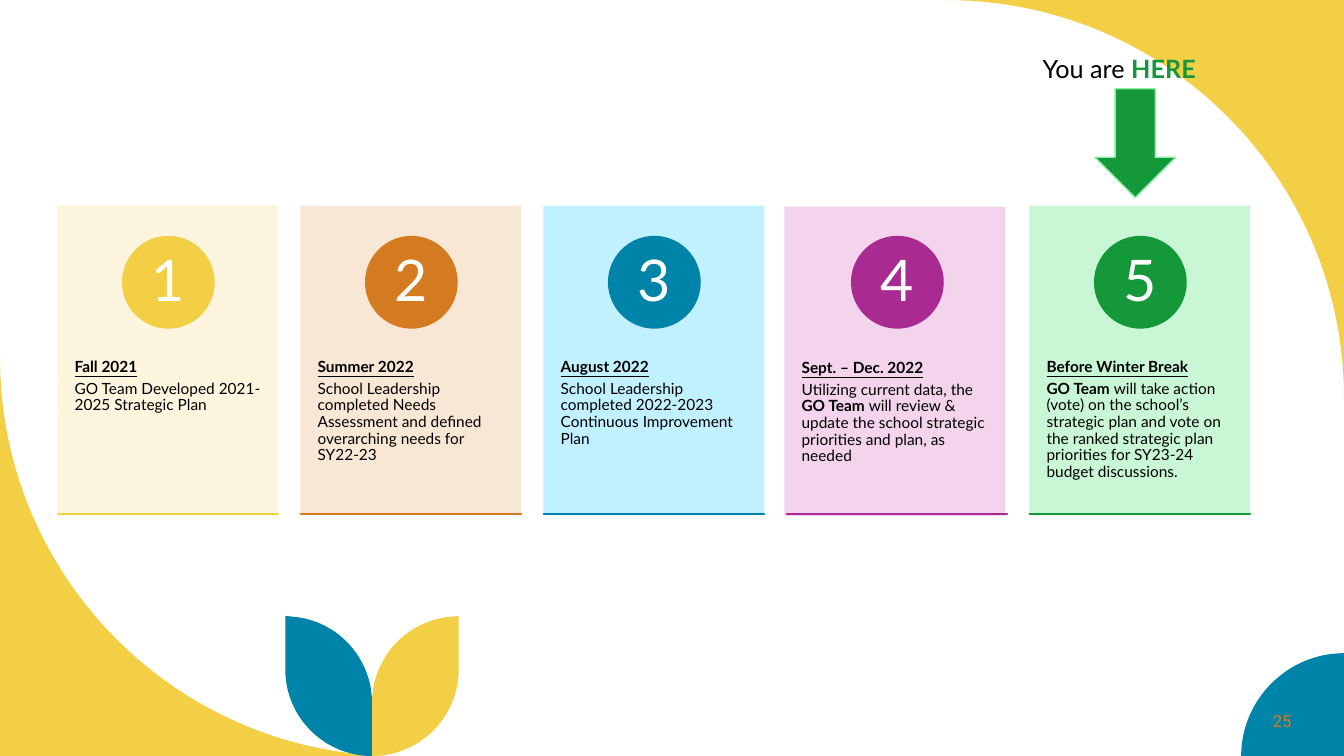
from pptx import Presentation
from pptx.dml.color import RGBColor
from pptx.enum.shapes import MSO_SHAPE as SHAPE
from pptx.enum.text import MSO_ANCHOR as ANCHOR, MSO_AUTO_SIZE as FIT, PP_ALIGN as ALIGN
from pptx.oxml.ns import qn
from pptx.util import Inches, Pt
from lxml import etree

THEME = {
    "yellow": RGBColor.from_string("F3CF45"),
    "orange": RGBColor.from_string("D47B22"),
    "blue": RGBColor.from_string("0083A9"),
    "purple": RGBColor.from_string("A92A91"),
    "green": RGBColor.from_string("159839"),
    "arrow_line": RGBColor.from_string("89EFA5"),
    "black": RGBColor.from_string("000000"),
    "white": RGBColor.from_string("FFFFFF"),
    "tints": [RGBColor.from_string(c) for c in ("FDF5DA", "F8E5D1", "BBF0FF", "F3CFEC", "C4F7D2")],
    "body": Pt(11), "page": Pt(12), "label": Pt(18), "number": Pt(41),
    "font": "Lato", "page_font": "Roboto",
}


def add_text(s, box, paragraphs, size, color, font=THEME["font"], align=ALIGN.LEFT,
             anchor=ANCHOR.TOP, insets=(0.1, 0.05), tight=False):
    tf = s.shapes.add_textbox(*map(Inches, box)).text_frame
    tf.word_wrap = True
    tf.auto_size = FIT.NONE
    tf.vertical_anchor = anchor
    tf.margin_left = tf.margin_right = Inches(insets[0])
    tf.margin_top = tf.margin_bottom = Inches(insets[1])
    for i, runs in enumerate(paragraphs):
        p = tf.paragraphs[0] if i == 0 else tf.add_paragraph()
        p.alignment = align
        p.font.size, p.font.name, p.font.color.rgb = size, font, color
        if tight:
            p.line_spacing = 0.9
            p.space_after = Pt(0)
            after = p._p.pPr.find(qn("a:spcAft"))
            after.remove(after[0])
            etree.SubElement(after, qn("a:spcPct")).set("val", "35000")
        for text, bold in runs:
            r = p.add_run()
            r.text = text
            r.font.bold = bold
    return tf


prs = Presentation()
prs.slide_width, prs.slide_height = Inches(13.33), Inches(7.5)
s = prs.slides.add_slide(prs.slide_layouts[6])

right_leaf = [[(4.55, 6.11)], [(4.55, 6.64)], [(4.55, 7.12), (4.16, 7.5), (3.69, 7.5)],
              [(3.69, 6.97)], [(3.69, 6.53), (4.03, 6.16), (4.46, 6.12)]]
left_leaf = [[(2 * 3.69 - x, y) for x, y in segment] for segment in right_leaf]
decorations = [
    ("yellow", [[(13.33, 0)], [(13.33, 3.95)], [(13.33, 1.77), (11.57, 0), (9.38, 0)]]),
    ("yellow", [[(0, 3.55)], [(0, 5.73), (1.77, 7.5), (3.95, 7.5)], [(0, 7.5)]]),
    ("blue", [[(13.33, 7.5)], [(13.33, 6.48)], [(12.77, 6.48), (12.31, 6.94), (12.31, 7.5)]]),
    ("yellow", right_leaf),
    ("blue", left_leaf),
]
for color, segments in decorations:
    points = [(Inches(x), Inches(y)) for segment in segments for x, y in segment]
    builder = s.shapes.build_freeform(*points[0])
    builder.add_line_segments(points[1:], close=True)
    sp = builder.convert_to_shape()
    lines = iter(list(sp._element.iter(qn("a:lnTo"))))
    for segment in segments[1:]:
        first, *rest = [next(lines) for point in segment]
        if rest:
            first.tag = qn("a:cubicBezTo")
            for line in rest:
                first.append(line[0])
                line.getparent().remove(line)
    sp.shadow.inherit = False
    sp.fill.solid()
    sp.fill.fore_color.rgb = THEME[color]
    sp.line.fill.background()

add_text(s, (11.1, 6.95, 1.81, 0.4), [[("25", False)]], THEME["page"], THEME["orange"],
         font=THEME["page_font"], align=ALIGN.RIGHT, anchor=ANCHOR.MIDDLE)

steps = [
    ("yellow", "Fall 2021", [("GO Team Developed 2021-2025 Strategic Plan", False)], 0, 0),
    ("orange", "Summer 2022",
     [("School Leadership completed Needs Assessment and defined overarching needs for SY22-23", False)], 0, 0),
    ("blue", "August 2022",
     [("School Leadership completed 2022-2023 Continuous Improvement Plan", False)], 0, 0),
    ("purple", "Sept. – Dec. 2022",
     [("Utilizing current data, the ", False), ("GO Team ", True),
      ("will review & update the school strategic priorities and plan, as needed", False)], -0.02, 0.01),
    ("green", "Before Winter Break",
     [("GO Team ", True),
      ("will take action (vote) on the school’s strategic plan and vote on the ranked strategic plan "
       "priorities for SY23-24 budget discussions.", False)], 0, 0),
]
CARD_LEFT, CARD_PITCH, CARD_WIDTH = 0.57, 2.41, 2.19
for i, (color, date, detail, dx, dy) in enumerate(steps):
    left = CARD_LEFT + i * CARD_PITCH
    card = s.shapes.add_shape(SHAPE.RECTANGLE, Inches(left + dx), Inches(2.04 + dy),
                              Inches(CARD_WIDTH), Inches(3.07))
    tf = add_text(s, (left + dx, 3.2 + dy, CARD_WIDTH, 1.84), [[(date, True)], detail],
                  THEME["body"], THEME["black"], insets=(0.17, 0.36), tight=True)
    tf.paragraphs[0].font.underline = True
    circle = s.shapes.add_shape(SHAPE.OVAL, Inches(left + 0.64), Inches(2.34), Inches(0.92), Inches(0.92))
    add_text(s, (left + 0.77, 2.48, 0.65, 0.65), [[(str(i + 1), False)]], THEME["number"],
             THEME["white"], align=ALIGN.CENTER, anchor=ANCHOR.MIDDLE, insets=(0.07, 0.01), tight=True)
    rule = s.shapes.add_shape(SHAPE.RECTANGLE, Inches(left), Inches(5.1), Inches(CARD_WIDTH), Inches(0))

    for sp, fill in ((card, THEME["tints"][i]), (circle, THEME[color]), (rule, THEME[color])):
        sp.shadow.inherit = False
        sp.fill.solid()
        sp.fill.fore_color.rgb = fill
        sp.line.fill.background()
    tint = card.fill._xPr.find(qn("a:solidFill"))[0]
    etree.SubElement(tint, qn("a:alpha")).set("val", "90000")
    rule.line.color.rgb = THEME[color]
    rule.line.width = Pt(1)

arrow = s.shapes.add_shape(SHAPE.DOWN_ARROW, Inches(10.86), Inches(0.88), Inches(0.8), Inches(1.08))
arrow.shadow.inherit = False
arrow.fill.solid()
arrow.fill.fore_color.rgb = THEME["green"]
arrow.line.color.rgb = THEME["arrow_line"]
arrow.line.width = Pt(1)

tf = add_text(s, (9.69, 0.48, 2.82, 0.4), [[("You are ", False), ("HERE", True)]],
              THEME["label"], THEME["black"], align=ALIGN.CENTER)
tf.paragraphs[0].runs[1].font.color.rgb = THEME["green"]

prs.save("out.pptx")
